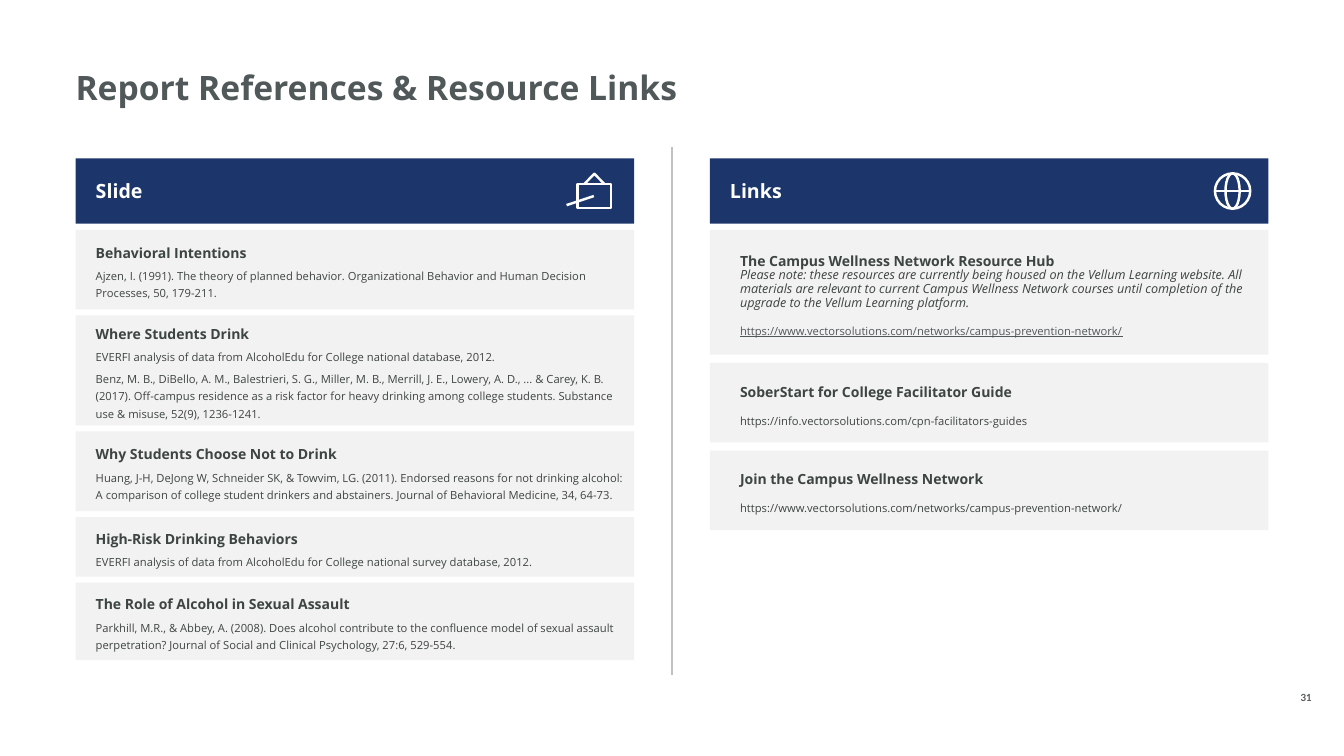
import pptx
import pptx.util
import pptx.dml.color
import pptx.enum.shapes
import pptx.enum.text
import lxml.etree

SHAPE = pptx.enum.shapes.MSO_SHAPE
ANCHOR = pptx.enum.text.MSO_ANCHOR
ALIGN = pptx.enum.text.PP_ALIGN
IN = pptx.util.Inches

SLIDE_W, SLIDE_H = 13.33, 7.5
MARGIN, GUTTER = 0.75, 0.75
COL_W = (SLIDE_W - 2 * MARGIN - GUTTER) / 2
HEADER_TOP, HEADER_H = 1.57, 0.65
CARDS_TOP = 2.28

NAVY, PALE, WHITE = "1C366B", "F2F2F2", "FFFFFF"
SLATE, INK, RULE = "515859", "3D4543", "C1C1C0"

HEADING = dict(size=10, bold=True, spacing=1.3)
BODY = dict(size=8, spacing=1.3, before=3)
LINK = dict(size=8, spacing=1.75, before=3)
NOTE = dict(size=9, italic=True, spacing=0.9)
HUB_LINK = dict(size=8, color=SLATE, underline=True, spacing=0.9, before=11)

REFERENCES = [
    (0.79, [("Behavioral Intentions", HEADING),
            ("Ajzen, I. (1991). The theory of planned behavior. Organizational Behavior "
             "and Human Decision Processes, 50, 179-211.", BODY)]),
    (1.09, [("Where Students Drink", HEADING),
            ("EVERFI analysis of data from AlcoholEdu for College national database, 2012.", BODY),
            ("Benz, M. B., DiBello, A. M., Balestrieri, S. G., Miller, M. B., Merrill, J. E., "
             "Lowery, A. D., ... & Carey, K. B. (2017). Off-campus residence as a risk factor "
             "for heavy drinking among college students. Substance use & misuse, 52(9), "
             "1236-1241.", BODY)]),
    (0.79, [("Why Students Choose Not to Drink", HEADING),
            ("Huang, J-H, DeJong W, Schneider SK, & Towvim, LG. (2011). Endorsed reasons for "
             "not drinking alcohol: A comparison of college student drinkers and abstainers. "
             "Journal of Behavioral Medicine, 34, 64-73.", BODY)]),
    (0.59, [("High-Risk Drinking Behaviors", HEADING),
            ("EVERFI analysis of data from AlcoholEdu for College national survey database, "
             "2012.", BODY)]),
    (0.77, [("The Role of Alcohol in Sexual Assault", HEADING),
            ("Parkhill, M.R., & Abbey, A. (2008). Does alcohol contribute to the confluence "
             "model of sexual assault perpetration? Journal of Social and Clinical Psychology, "
             "27:6, 529-554.", BODY)]),
]
RESOURCES = [
    (1.24, [("The Campus Wellness Network Resource Hub", HEADING),
            ("Please note: these resources are currently being housed on the Vellum Learning "
             "website. All materials are relevant to current Campus Wellness Network courses "
             "until completion of the upgrade to the Vellum Learning platform.", NOTE),
            ("https://www.vectorsolutions.com/networks/campus-prevention-network/", HUB_LINK)]),
    (0.79, [("SoberStart for College Facilitator Guide", HEADING),
            ("https://info.vectorsolutions.com/cpn-facilitators-guides", LINK)]),
    (0.79, [("Join the Campus Wellness Network", HEADING),
            ("https://www.vectorsolutions.com/networks/campus-prevention-network/", LINK)]),
]


def rgb(value):
    return pptx.dml.color.RGBColor.from_string(value)


def write(tf, text, size=8, font="Open Sans", color=INK, bold=False, italic=False,
          underline=False, spacing=1.0, before=None, align=ALIGN.LEFT):
    p = tf.paragraphs[0] if not tf.text else tf.add_paragraph()
    p.alignment = align
    p.line_spacing = spacing
    if before is not None:
        p.space_before = pptx.util.Pt(before)
    r = p.add_run()
    r.text = text
    f = r.font
    f.name, f.size = font, pptx.util.Pt(size)
    f.bold, f.italic, f.underline = bold, italic, underline
    f.color.rgb = rgb(color)


def frame(sp, left=0, right=0, anchor=ANCHOR.MIDDLE):
    tf = sp.text_frame
    tf.word_wrap = True
    tf.vertical_anchor = anchor
    tf.margin_left, tf.margin_right = IN(left), IN(right)
    tf.margin_top = tf.margin_bottom = 0
    return tf


def text_box(slide, x, y, w, h, text, anchor=ANCHOR.TOP, **fmt):
    sp = slide.shapes.add_textbox(IN(x), IN(y), IN(w), IN(h))
    write(frame(sp, anchor=anchor), text, **fmt)


def panel(slide, x, y, w, h, fill):
    sp = slide.shapes.add_shape(SHAPE.RECTANGLE, IN(x), IN(y), IN(w), IN(h))
    sp.shadow.inherit = False
    sp.fill.solid()
    sp.fill.fore_color.rgb = rgb(fill)
    sp.line.fill.background()
    return sp


def outline(sp):
    sp.shadow.inherit = False
    sp.fill.background()
    sp.line.color.rgb = rgb(WHITE)
    sp.line.width = pptx.util.Pt(1.75)


def line(slide, x1, y1, x2, y2, color, width):
    ln = slide.shapes.add_connector(pptx.enum.shapes.MSO_CONNECTOR.STRAIGHT,
                                    IN(x1), IN(y1), IN(x2), IN(y2))
    ln.line.color.rgb = rgb(color)
    ln.line.width = pptx.util.Pt(width)
    lxml.etree.SubElement(ln._element.spPr, pptx.oxml.ns.qn("a:effectLst"))


def globe_icon(slide, right, mid):
    d = 0.35
    for w in (d, d * 0.4):
        x = right - d / 2 - w / 2
        outline(slide.shapes.add_shape(SHAPE.OVAL, IN(x), IN(mid - d / 2), IN(w), IN(d)))
    line(slide, right - d, mid, right, mid, WHITE, 1.75)


def board_icon(slide, right, mid):
    w, h = 0.33, 0.24
    x, y = right - w, mid - 0.07
    outline(slide.shapes.add_shape(SHAPE.RECTANGLE, IN(x), IN(y), IN(w), IN(h)))
    fb = slide.shapes.build_freeform(IN(x + w * 0.2), IN(y))
    fb.add_line_segments([(IN(x + w / 2), IN(y - 0.1)), (IN(x + w * 0.8), IN(y))], close=False)
    outline(fb.convert_to_shape())
    line(slide, x - 0.11, y + 0.21, x + 0.16, y + 0.12, WHITE, 1.75)


def column(slide, x, title, icon, icon_inset, cards, indent, gap):
    sp = panel(slide, x, HEADER_TOP, COL_W, HEADER_H, NAVY)
    write(frame(sp, 0.2, 0.2), title, size=14, color=WHITE, bold=True)
    icon(slide, x + COL_W - icon_inset, HEADER_TOP + HEADER_H / 2)
    y = CARDS_TOP
    for height, paragraphs in cards:
        tf = frame(panel(slide, x, y, COL_W, height, PALE), indent, 0.1)
        for text, fmt in paragraphs:
            write(tf, text, **fmt)
        y += height + gap


def references_slide(prs):
    slide = prs.slides.add_slide(prs.slide_layouts[6])
    line(slide, SLIDE_W / 2, 1.46, SLIDE_W / 2, 6.7, RULE, 1)
    text_box(slide, MARGIN, 0.71, SLIDE_W - 2 * MARGIN, 0.7, "Report References & Resource Links",
             size=24, color=SLATE, bold=True, spacing=0.9)
    column(slide, MARGIN, "Slide", board_icon, 0.23, REFERENCES, 0.2, 0.06)
    column(slide, MARGIN + COL_W + GUTTER, "Links", globe_icon, 0.18, RESOURCES, 0.3, 0.08)
    text_box(slide, 12.7, 6.83, 0.51, 0.15, "31", anchor=ANCHOR.BOTTOM,
             size=7, font="Lato", color=SLATE, bold=True, align=ALIGN.CENTER)


def main():
    prs = pptx.Presentation()
    prs.slide_width, prs.slide_height = IN(SLIDE_W), IN(SLIDE_H)
    references_slide(prs)
    prs.save("out.pptx")


if __name__ == "__main__":
    main()
